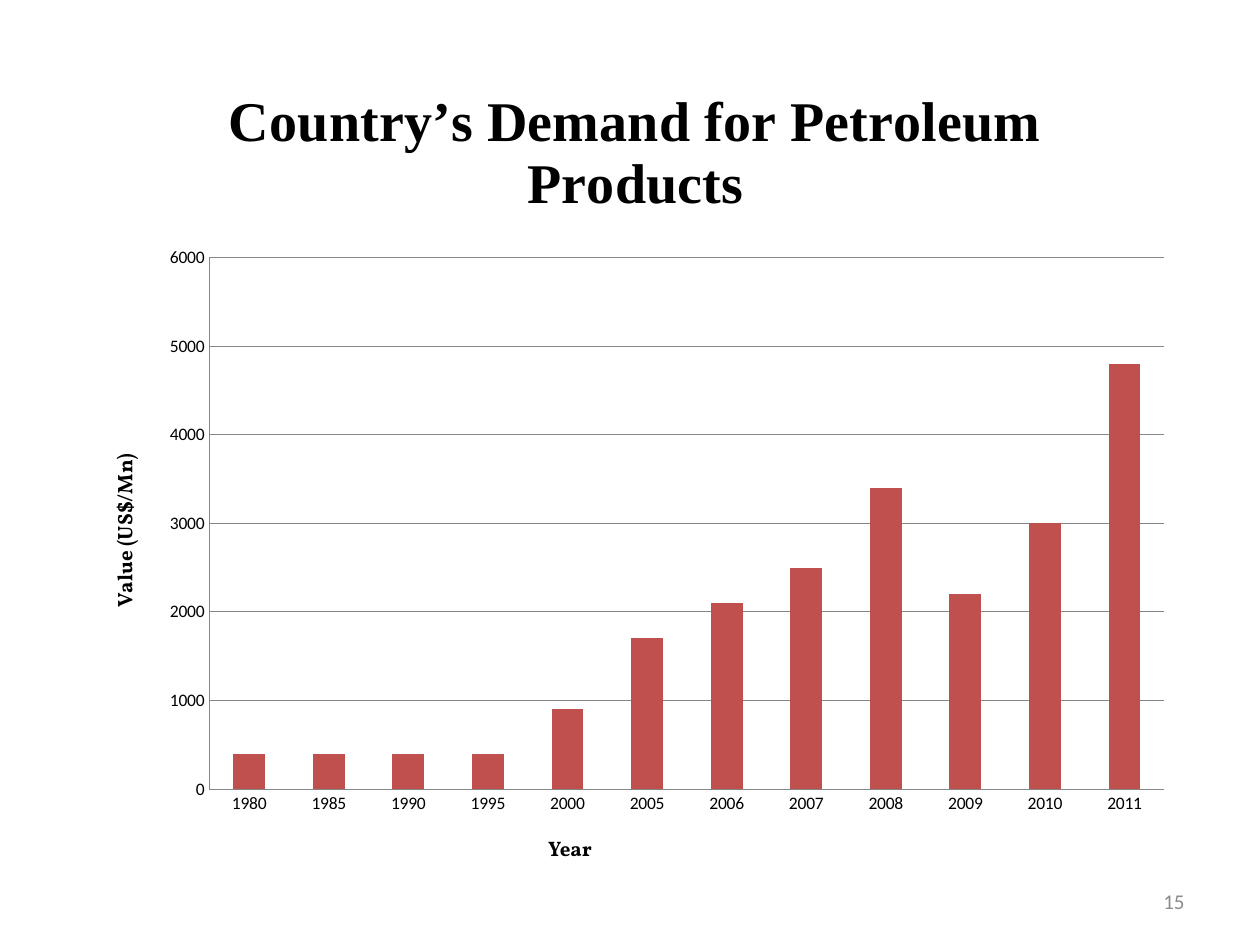
from dataclasses import dataclass

import pptx
import pptx.chart.data
import pptx.dml.color
import pptx.enum.chart
import pptx.enum.text
import pptx.oxml
import pptx.oxml.ns
import pptx.util
from pptx.util import Cm

BLACK, GREY, AXIS_GREY, RED = "000000", "8C8C8C", "868686", "C0504D"

DEMAND = {
    "1980": 400, "1985": 400, "1990": 400, "1995": 400,
    "2000": 900, "2005": 1700, "2006": 2100, "2007": 2500,
    "2008": 3400, "2009": 2200, "2010": 3000, "2011": 4800,
}


@dataclass
class Box:
    """Position and size in centimetres."""
    left: float
    top: float
    width: float
    height: float

    def lengths(self) -> tuple:
        return Cm(self.left), Cm(self.top), Cm(self.width), Cm(self.height)


def color(value: str):
    return pptx.dml.color.RGBColor.from_string(value)


def format_font(font, name: str, size: float, bold: bool = False, hex_color: str = BLACK) -> None:
    font.name, font.size, font.bold = name, pptx.util.Pt(size), bold
    font.color.rgb = color(hex_color)


def write(frame, text: str, *, align=None, **font_format) -> None:
    """Put one formatted run into a text frame."""
    paragraph = frame.paragraphs[0]
    paragraph.alignment = align
    run = paragraph.add_run()
    run.text = text
    format_font(run.font, **font_format)


def add_label(slide, box: Box, text: str, *, anchor=pptx.enum.text.MSO_ANCHOR.TOP, **text_format) -> None:
    frame = slide.shapes.add_textbox(*box.lengths()).text_frame
    frame.word_wrap = True
    frame.vertical_anchor = anchor
    write(frame, text, **text_format)


def place(element, inner: bool = False, **fractions: float) -> None:
    """Give a chart title or plot area a manual layout, in fractions of the chart."""
    for old in element.findall(pptx.oxml.ns.qn("c:layout")):
        element.remove(old)
    target = '<c:layoutTarget val="inner"/>' if inner else ""
    modes = "".join(f'<c:{key}Mode val="edge"/>' for key in "xy")
    values = "".join(f'<c:{key} val="{value}"/>' for key, value in fractions.items())
    layout = pptx.oxml.parse_xml(
        f'<c:layout {pptx.oxml.ns.nsdecls("c")}><c:manualLayout>'
        f"{target}{modes}{values}</c:manualLayout></c:layout>"
    )
    text = element.find(pptx.oxml.ns.qn("c:tx"))
    if text is None:
        element.insert(0, layout)
    else:
        text.addnext(layout)


def style_line(line) -> None:
    line.color.rgb = color(AXIS_GREY)
    line.width = pptx.util.Pt(0.5)


def style_axis(axis) -> None:
    axis.major_tick_mark = axis.minor_tick_mark = pptx.enum.chart.XL_TICK_MARK.NONE
    style_line(axis.format.line)


def add_demand_chart(slide, box: Box) -> None:
    data = pptx.chart.data.CategoryChartData()
    data.categories = list(DEMAND)
    data.add_series("Series 1", list(DEMAND.values()))
    chart = slide.shapes.add_chart(
        pptx.enum.chart.XL_CHART_TYPE.COLUMN_CLUSTERED, *box.lengths(), data
    ).chart
    chart.has_legend = False
    format_font(chart.font, "Calibri", 10)

    # Heading
    heading = chart.chart_title
    write(heading.text_frame, "Country’s Demand for Petroleum Products",
          name="Times New Roman", size=32, bold=True)
    heading.include_in_layout = False
    place(heading._element, x=0.122, y=0.028)

    # Columns
    plot = chart.plots[0]
    plot.gap_width = 150
    plot.vary_by_categories = False
    columns = plot.series[0].format.fill
    columns.solid()
    columns.fore_color.rgb = color(RED)
    place(chart._chartSpace.chart.plotArea, inner=True, x=0.1135, y=0.263, w=0.866, h=0.684)

    # Axes
    years, values = chart.category_axis, chart.value_axis
    style_axis(years)
    style_axis(values)
    values.minimum_scale, values.maximum_scale, values.major_unit = 0, 6000, 1000
    values.has_major_gridlines = True
    style_line(values.major_gridlines.format.line)
    write(values.axis_title.text_frame, "Value (US$/Mn)", name="Vollkorn", size=12, bold=True)
    place(values.axis_title._element, x=0.02, y=0.51)


def main() -> None:
    deck = pptx.Presentation()
    deck.slide_width, deck.slide_height = Cm(25.4), Cm(19.05)
    slide = deck.slides.add_slide(deck.slide_layouts[6])

    add_demand_chart(slide, Box(1.7, 1.07, 22.23, 15.67))

    # Year caption and page number
    add_label(slide, Box(10.8, 16.71, 5.08, 0.76), "Year", name="Vollkorn", size=12, bold=True)
    add_label(slide, Box(18.21, 17.65, 5.92, 1.02), "15", name="Calibri", size=12, hex_color=GREY,
              align=pptx.enum.text.PP_ALIGN.RIGHT, anchor=pptx.enum.text.MSO_ANCHOR.MIDDLE)

    deck.save("out.pptx")


if __name__ == "__main__":
    main()
